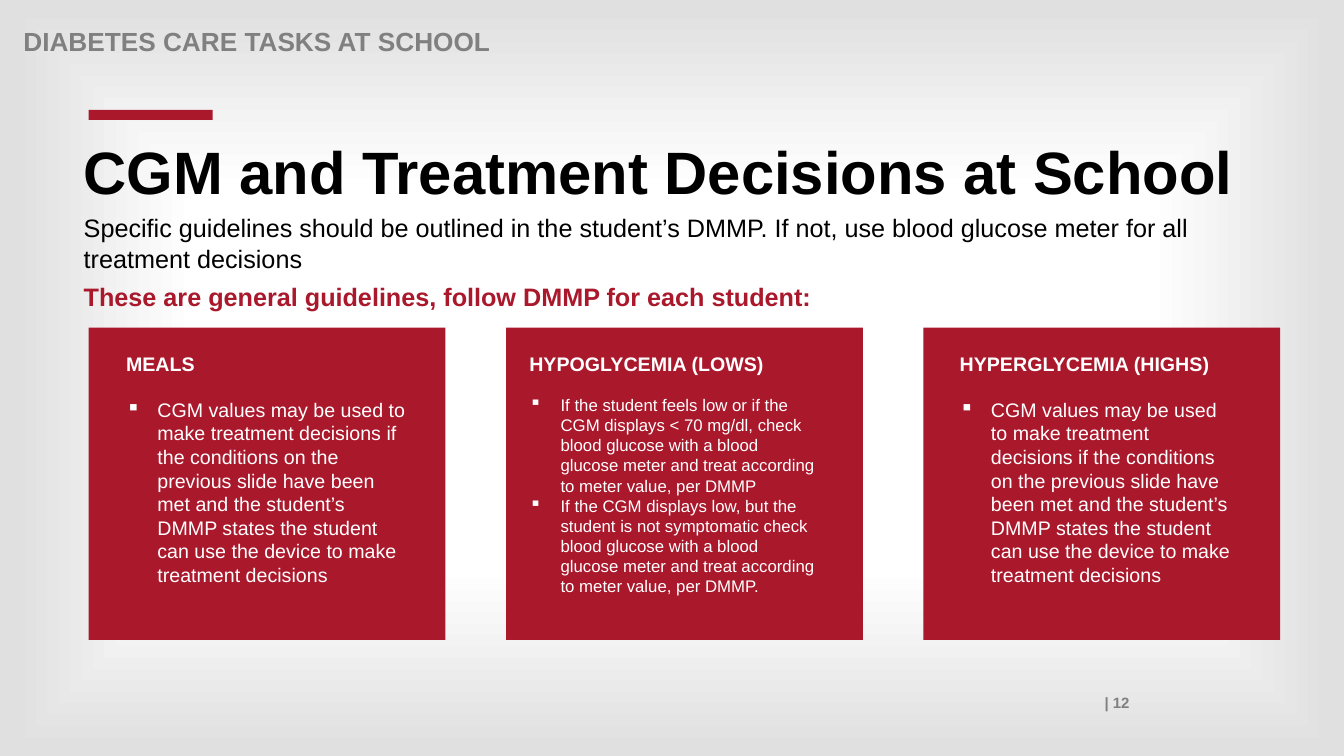
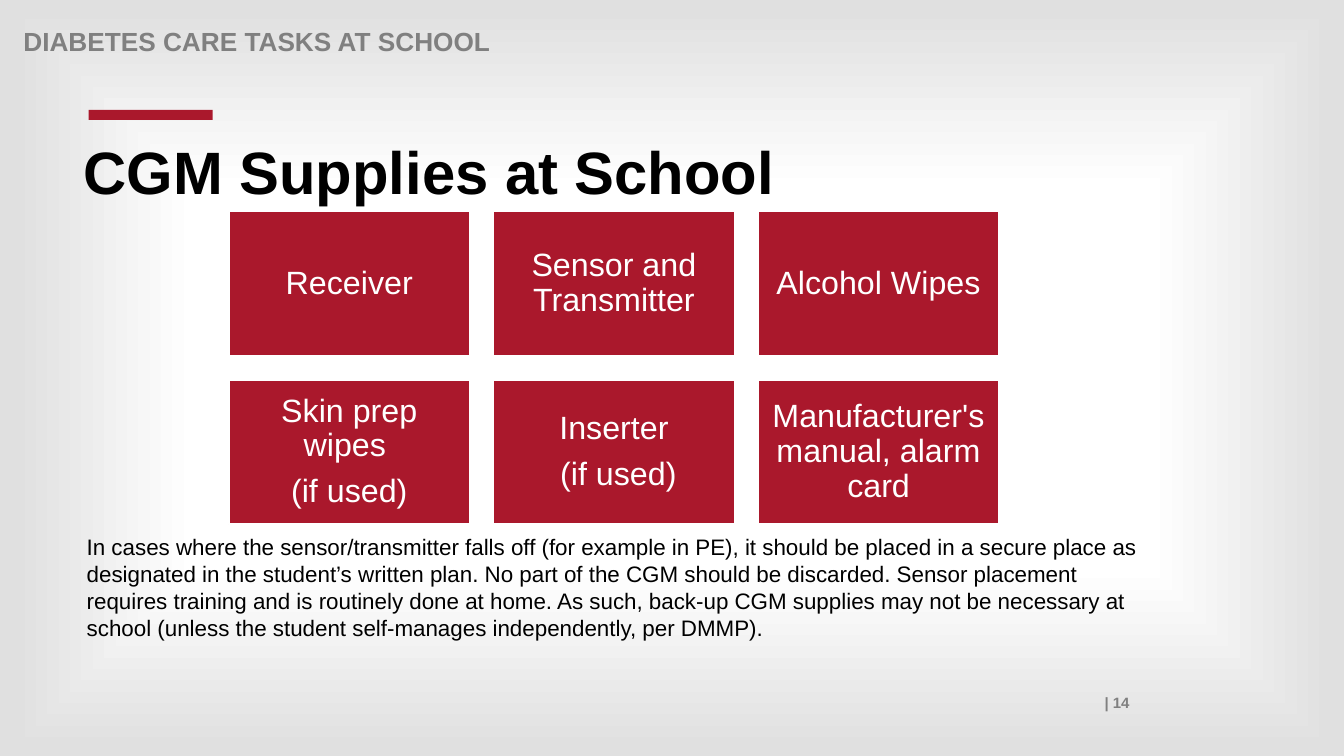
from pptx import Presentation
from pptx.dml.color import RGBColor
from pptx.enum.shapes import MSO_SHAPE
from pptx.enum.text import MSO_ANCHOR, MSO_AUTO_SIZE, PP_ALIGN
from pptx.oxml import parse_xml
from pptx.oxml.ns import nsdecls, qn
from pptx.util import Inches, Pt

RED, BLACK, WHITE, GRAY, EDGE = "AA182C", "000000", "FFFFFF", "808080", "E0E0E0"
FONT = "Arial"


def rgb(value):
    """Turn a hex string into a colour."""
    return RGBColor.from_string(value)


def write(tf, text, size=14, color=BLACK, bold=False, align=PP_ALIGN.LEFT,
          before=0, after=0, spacing=None, bullet=None, indent=0):
    """Add one formatted paragraph to a text frame."""
    p = tf.add_paragraph() if tf.text else tf.paragraphs[0]
    pPr = p._p.get_or_add_pPr()
    pPr.set("marL", str(indent))
    pPr.set("indent", str(-indent))
    mark = f'<a:buChar {nsdecls("a")} char="{bullet}"/>' if bullet else f'<a:buNone {nsdecls("a")}/>'
    pPr.append(parse_xml(mark))
    p.alignment = align
    p.space_before, p.space_after = Pt(before), Pt(after)
    if spacing:
        p.line_spacing = spacing
    r = p.add_run()
    r.text = text
    r.font.name, r.font.size, r.font.bold = FONT, Pt(size), bold
    r.font.color.rgb = rgb(color)


class Deck:
    """Hold the style and the current slide; lengths are percent of the slide."""

    def __init__(self):
        """Start a wide presentation with the shared background."""
        self.prs = Presentation()
        self.prs.slide_width, self.prs.slide_height = Inches(13.33), Inches(7.5)
        self.s = None
        self.set_background()

    def x(self, share):
        """Convert a share of the slide width."""
        return int(self.prs.slide_width * share / 100)

    def y(self, share):
        """Convert a share of the slide height."""
        return int(self.prs.slide_height * share / 100)

    def box(self, left, top, width, height):
        """Convert a whole rectangle."""
        return self.x(left), self.y(top), self.x(width), self.y(height)

    def set_background(self):
        """Give the master a gradient that darkens towards the edges."""
        master = self.prs.slide_master
        master.background.fill.solid()
        solid = master.element.find(".//" + qn("p:bgPr")).find(qn("a:solidFill"))
        stops = "".join(
            f'<a:gs pos="{pos * 1000}"><a:srgbClr val="{color}"/></a:gs>'
            for pos, color in ((12, WHITE), (50, WHITE), (98, EDGE)))
        solid.getparent().replace(solid, parse_xml(
            f'<a:gradFill {nsdecls("a")} rotWithShape="1"><a:gsLst>{stops}</a:gsLst>'
            '<a:path path="shape"><a:fillToRect l="50000" t="50000" r="50000" b="50000"/>'
            '</a:path></a:gradFill>'))

    def slide(self, title, number):
        """Add a slide with header, accent bar, title and page number."""
        self.s = self.prs.slides.add_slide(self.prs.slide_layouts[1])
        self.label("DIABETES CARE TASKS AT SCHOOL", 1, 3.2, 82.5, 3.73,
                   size=18.7, color=GRAY, bold=True, spacing=0.9)
        self.label(f"| {number}", 9.08, 91.07, 75.7, 3.73,
                   size=10.7, color=GRAY, bold=True, align=PP_ALIGN.RIGHT)
        self.rect(6.6, 14.53, 9.23, 1.33)
        tf = self.place(self.s.shapes.title, 5.48, 18.27, 88.67, 11.07)
        write(tf, title, size=42.7, bold=True, spacing=0.9)

    def place(self, sp, *area):
        """Move a placeholder and return its text frame."""
        sp.left, sp.top, sp.width, sp.height = self.box(*area)
        tf = sp.text_frame
        tf.word_wrap, tf.auto_size = True, MSO_AUTO_SIZE.NONE
        tf.vertical_anchor = MSO_ANCHOR.TOP
        return tf

    def body(self, *area):
        """Place the body placeholder."""
        return self.place(self.s.placeholders[1], *area)

    def label(self, text, *area, **style):
        """Add a text box with one paragraph."""
        tf = self.s.shapes.add_textbox(*self.box(*area)).text_frame
        tf.word_wrap = True
        write(tf, text, **style)

    def rect(self, *area, line=None):
        """Add a red rectangle and return its text frame."""
        sp = self.s.shapes.add_shape(MSO_SHAPE.RECTANGLE, *self.box(*area))
        sp.shadow.inherit = False
        sp.fill.solid()
        sp.fill.fore_color.rgb = rgb(RED)
        if line:
            sp.line.color.rgb, sp.line.width = rgb(line), Pt(1)
        else:
            sp.line.fill.background()
        sp.text_frame.word_wrap = True
        return sp.text_frame

    def card(self, col, heading, items, size, left, right):
        """Add a card with a heading and a bulleted list."""
        tf = self.rect(6.6 + 31.05 * col, 43.33, 26.55, 41.33)
        tf.vertical_anchor = MSO_ANCHOR.TOP
        tf.margin_left, tf.margin_right, tf.margin_top = self.x(left), self.x(right), self.y(3.2)
        write(tf, heading, size=14, color=WHITE, bold=True)
        for i, item in enumerate(items):
            write(tf, item, size=size, color=WHITE, bullet="▪", indent=self.x(2.33),
                  before=0 if i else size * 1.15)

    def tile(self, col, row, lines):
        """Add a centred tile to the supplies grid."""
        tf = self.rect(17.03 + 19.69 * col, 28 + 22.27 * row, 17.93, 19.07, line=WHITE)
        tf.vertical_anchor = MSO_ANCHOR.MIDDLE
        tf.margin_left = tf.margin_right = tf.margin_top = tf.margin_bottom = self.x(0.72)
        for text in lines:
            write(tf, text, size=23, color=WHITE, align=PP_ALIGN.CENTER, spacing=0.9, after=8)


def decisions(deck):
    """Build the slide on treatment decisions."""
    deck.slide("CGM and Treatment Decisions at School", 12)
    tf = deck.body(5.48, 27.47, 87, 15)
    write(tf, "Specific guidelines should be outlined in the student’s DMMP. If not, use blood "
          "glucose meter for all treatment decisions", size=18)
    write(tf, "These are general guidelines, follow DMMP for each student:",
          size=18, color=RED, bold=True, before=6)
    allowed = ["CGM values may be used to make treatment decisions if the conditions on the "
               "previous slide have been met and the student’s DMMP states the student can use "
               "the device to make treatment decisions"]
    action = ("check blood glucose with a blood glucose meter and treat according to meter "
              "value, per DMMP")
    lows = [f"If the student feels low or if the CGM displays < 70 mg/dl, {action}",
            f"If the CGM displays low, but the student is not symptomatic {action}."]
    deck.card(0, "MEALS", allowed, 14, 2.78, 2.7)
    deck.card(1, "HYPOGLYCEMIA (LOWS)", lows, 12, 1.73, 3.15)
    deck.card(2, "HYPERGLYCEMIA (HIGHS)", allowed, 14, 2.7, 3.53)


def supplies(deck):
    """Build the slide on supplies."""
    deck.slide("CGM Supplies at School", 14)
    tiles = [["Receiver"], ["Sensor and Transmitter"], ["Alcohol Wipes"],
             ["Skin prep wipes ", "(if used)"], ["Inserter", " (if used)"],
             ["Manufacturer's manual, alarm card"]]
    for i, lines in enumerate(tiles):
        deck.tile(i % 3, i // 3, lines)
    tf = deck.body(6.45, 70.53, 79.9, 18)
    tf.margin_left = tf.margin_right = tf.margin_top = tf.margin_bottom = 0
    write(tf, "In cases where the sensor/transmitter falls off (for example in PE), it should be "
          "placed in a secure place as designated in the student’s written plan. No part of the "
          "CGM should be discarded. Sensor placement requires training and is routinely done at "
          "home. As such, back-up CGM supplies may not be necessary at school (unless the student "
          "self-manages independently, per DMMP).", size=16)


def main():
    """Build and save the deck."""
    deck = Deck()
    decisions(deck)
    supplies(deck)
    deck.prs.save("out.pptx")


if __name__ == "__main__":
    main()
